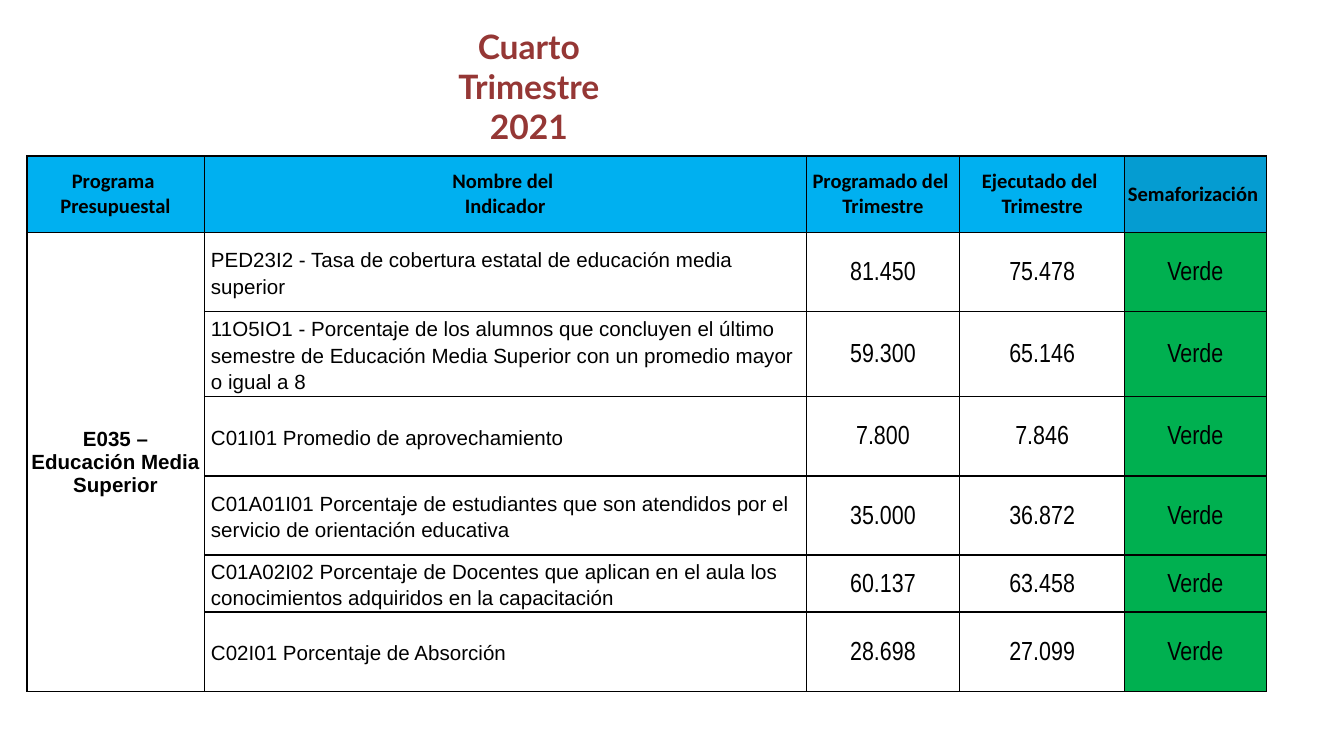
from lxml import etree
from pptx import Presentation
from pptx import util as u
from pptx.dml.color import RGBColor
from pptx.enum import text
from pptx.oxml.ns import qn

COLORS = {"title": "953735", "header": "00B0F0", "status_header": "059CD1",
          "green": "00B050", "white": "FFFFFF", "black": "000000"}
COLUMN_WIDTHS = [1.32, 4.48, 1.14, 1.23, 1.05]
ROW_HEIGHTS = [0.57, 0.59, 0.59, 0.59, 0.59, 0.06, 0.59]
HEADERS = [["Programa ", "Presupuestal"], ["Nombre del ", "Indicador"],
           ["Programado del ", "Trimestre"], ["Ejecutado del ", "Trimestre"],
           ["Semaforización "]]
PROGRAM = "E035 – Educación Media Superior"
INDICATORS = [
    ("PED23I2 - Tasa de cobertura estatal de educación media superior",
     "81.450", "75.478", "Verde"),
    ("11O5IO1 - Porcentaje de los alumnos que concluyen el último semestre de "
     "Educación Media Superior con un promedio mayor o igual a 8",
     "59.300", "65.146", "Verde"),
    ("C01I01 Promedio de aprovechamiento", "7.800", "7.846", "Verde"),
    ("C01A01I01 Porcentaje de estudiantes que son atendidos por el servicio de "
     "orientación educativa", "35.000", "36.872", "Verde"),
    ("C01A02I02 Porcentaje de Docentes que aplican en el aula los conocimientos "
     "adquiridos en la capacitación", "60.137", "63.458", "Verde"),
    ("C02I01 Porcentaje de Absorción", "28.698", "27.099", "Verde"),
]


def write_paragraph(paragraph, words, font, size, color, bold=False, centred=True, spacing=None):
    """Add one formatted run to a paragraph."""
    paragraph.alignment = text.PP_ALIGN.CENTER if centred else text.PP_ALIGN.LEFT
    paragraph.line_spacing = spacing
    run = paragraph.add_run()
    run.text = words
    run.font.name, run.font.size, run.font.bold = font, u.Pt(size), bold
    run.font.color.rgb = RGBColor.from_string(COLORS[color])


def set_borders(cell, left, bottom):
    """Draw the four black borders of a cell, widths in points."""
    properties = cell._tc.get_or_add_tcPr()
    widths = {"a:lnL": left, "a:lnR": 0.5, "a:lnT": 1, "a:lnB": bottom}
    for position, (tag, width) in enumerate(widths.items()):
        line = etree.Element(qn(tag), w=str(u.Pt(width)))
        fill = etree.SubElement(line, qn("a:solidFill"))
        etree.SubElement(fill, qn("a:srgbClr"), val=COLORS["black"])
        properties.insert(position, line)


def fill_cell(cell, lines, fill, margins, **style):
    """Fill a cell with colour and vertically centred text."""
    if fill:
        cell.fill.solid()
        cell.fill.fore_color.rgb = RGBColor.from_string(COLORS[fill])
    else:
        cell.fill.background()
    cell.vertical_anchor = text.MSO_ANCHOR.MIDDLE
    cell.margin_left = cell.margin_right = u.Inches(margins)
    cell.margin_top = cell.margin_bottom = 0
    frame = cell.text_frame
    for index, words in enumerate(lines):
        paragraph = frame.add_paragraph() if index else frame.paragraphs[0]
        write_paragraph(paragraph, words, color="black", **style)


def add_title(slide, left, top, width, height):
    """Place the quarter heading in the title placeholder."""
    title = slide.shapes.title
    title.left, title.top, title.width, title.height = map(u.Inches, (left, top, width, height))
    frame = title.text_frame
    frame.word_wrap = True
    frame.auto_size = text.MSO_AUTO_SIZE.SHAPE_TO_FIT_TEXT
    frame.vertical_anchor = text.MSO_ANCHOR.TOP
    write_paragraph(frame.paragraphs[0], "Cuarto Trimestre 2021", "Lato", 18, "title", bold=True)


def add_indicator_table(slide, left, top, width, height):
    """Build the table of programmed and executed indicators."""
    frame = slide.shapes.add_table(
        len(ROW_HEIGHTS), len(COLUMN_WIDTHS), *map(u.Inches, (left, top, width, height)))
    table = frame.table
    table.first_row = table.horz_banding = False
    for column, column_width in zip(table.columns, COLUMN_WIDTHS):
        column.width = u.Inches(column_width)
    for row, row_height in zip(table.rows, ROW_HEIGHTS):
        row.height = u.Inches(row_height)
    frame.width, frame.height = u.Inches(width), u.Inches(height)

    for index, lines in enumerate(HEADERS):
        fill = "status_header" if index == len(HEADERS) - 1 else "header"
        fill_cell(table.cell(0, index), lines, fill, 0, font="Calibri", size=11, bold=True)

    last_row = len(INDICATORS)
    program = table.cell(1, 0)
    program.merge(table.cell(last_row, 0))
    fill_cell(program, [PROGRAM], None, 0.01, font="Arial", size=11, bold=True)
    program.margin_top = u.Inches(0.01)

    for row, (name, *values) in enumerate(INDICATORS, 1):
        fill_cell(table.cell(row, 1), [name], None, 0.05,
                  font="Arial", size=11, centred=False, spacing=1.15)
        for column, value in enumerate(values, 2):
            fill = "green" if value == "Verde" else None
            fill_cell(table.cell(row, column), [value], fill, 0.05,
                      font="Arial Narrow", size=14, spacing=1.15)

    for row in range(len(ROW_HEIGHTS)):
        for column in range(len(COLUMN_WIDTHS)):
            cell = table.cell(row, column)
            closing = row == last_row or cell.is_merge_origin
            set_borders(cell, left=0.5 if column else 1, bottom=0.5 if closing else 1)


def main():
    """Create the slide and save it."""
    presentation = Presentation()
    presentation.slide_width = u.Inches(10)
    presentation.slide_height = presentation.slide_width * 9 // 16
    slide = presentation.slides.add_slide(presentation.slide_layouts[5])
    add_indicator_table(slide, 0.2, 1.16, 9.21, 3.98)
    add_title(slide, 3.11, 0.14, 1.65, 1.01)
    presentation.save("out.pptx")


if __name__ == "__main__":
    main()
